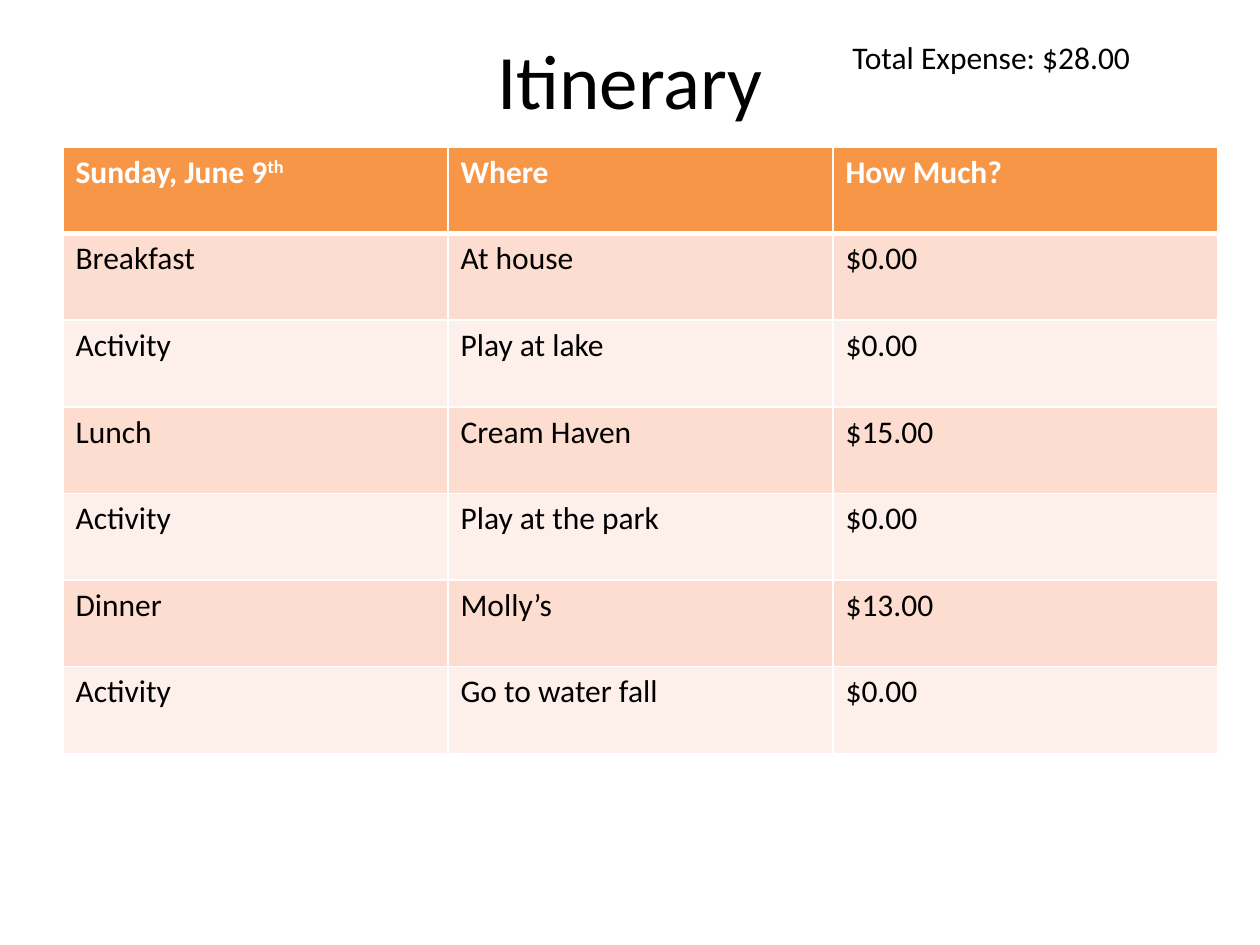
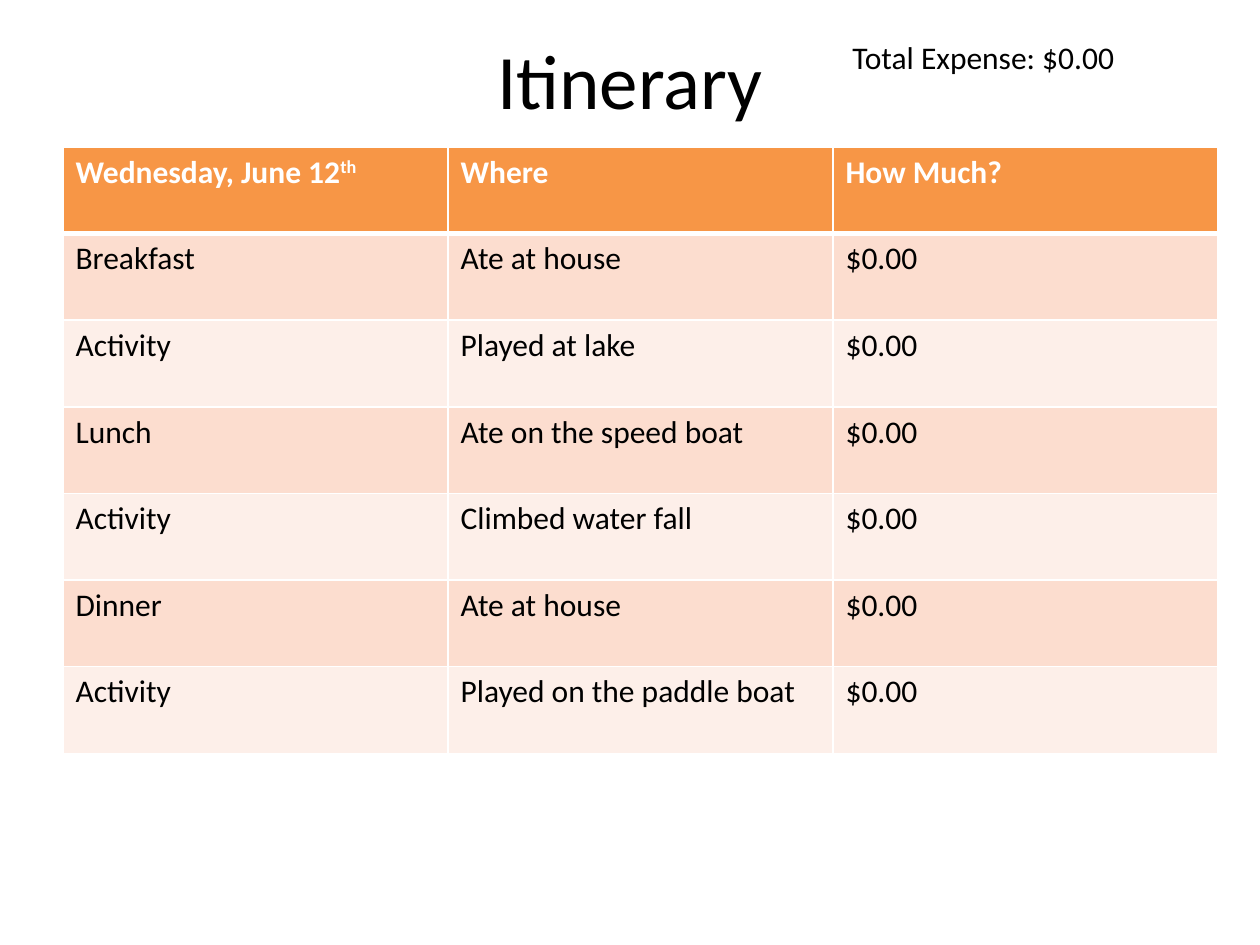
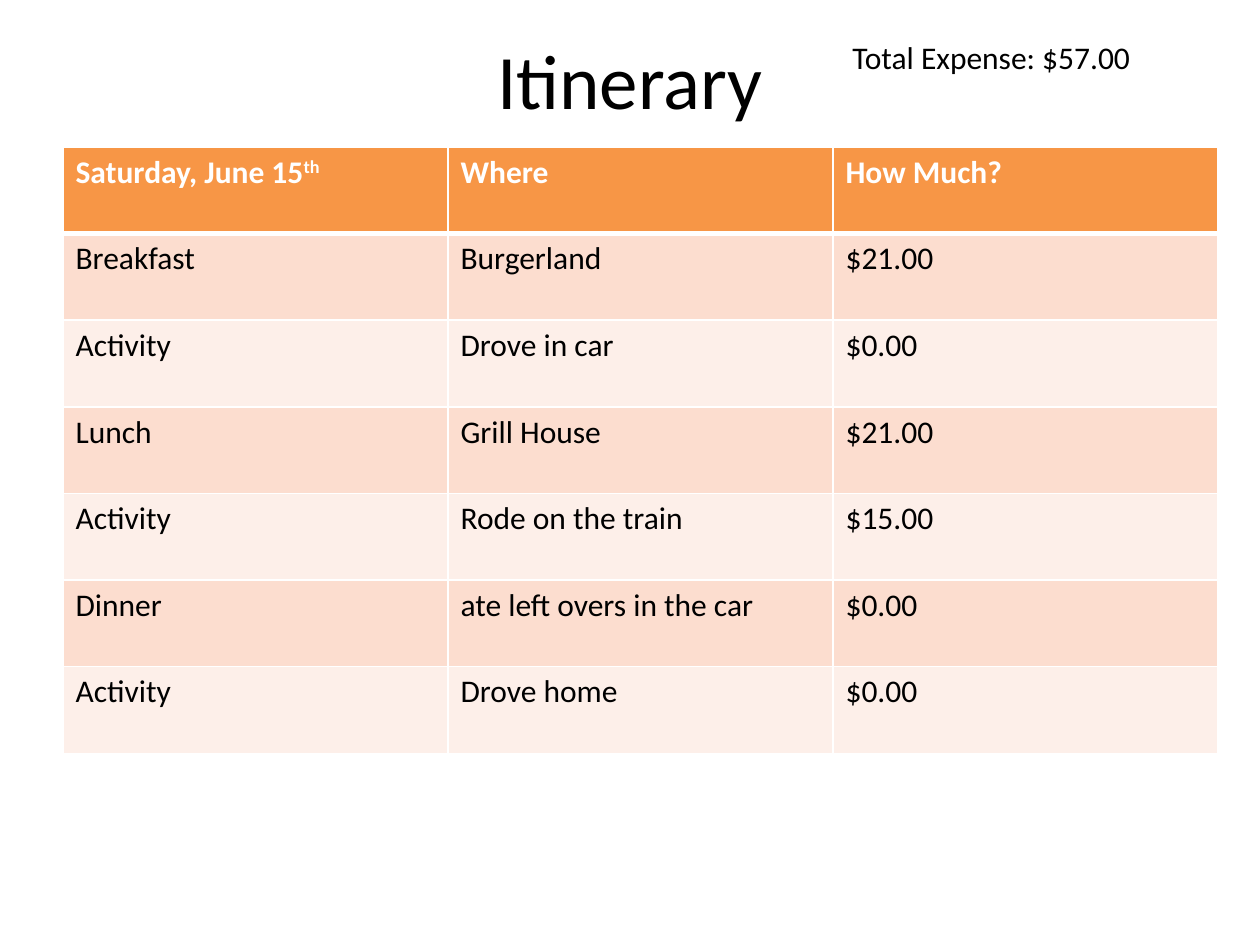
"""Build three itinerary slides, each with a day's plan and its total expense."""
from pptx import Presentation
from pptx import util as u
from pptx.dml import color
from pptx.enum import text
from pptx.oxml import ns, parse_xml

COLORS = {
    "ink": "000000",
    "paper": "FFFFFF",
    "header": "F79646",
    "odd": "FCDDCF",
    "even": "FDEFE9",
}
OCCASIONS = ["Breakfast", "Activity", "Lunch", "Activity", "Dinner", "Activity"]
DAYS = [
    ("Sunday, June 9", [
        ("At house", 0), ("Play at lake", 0), ("Cream Haven", 15),
        ("Play at the park", 0), ("Molly’s", 13), ("Go to water fall", 0),
    ]),
    ("Wednesday, June 12", [
        ("Ate at house", 0), ("Played at lake", 0), ("Ate on the speed boat", 0),
        ("Climbed water fall", 0), ("Ate at house", 0), ("Played on the paddle boat", 0),
    ]),
    ("Saturday, June 15", [
        ("Burgerland", 21), ("Drove in car", 0), ("Grill House", 21),
        ("Rode on the train", 15), ("ate left overs in the car", 0), ("Drove home", 0),
    ]),
]


def dollars(amount):
    return f"${amount:.2f}"


class Deck:
    font = "Calibri"
    body_size = 18
    title_size = 44
    column_width = 220
    row_height = 49.5

    def __init__(self):
        self.prs = Presentation()
        self.prs.slide_width, self.prs.slide_height = u.Pt(720), u.Pt(540)
        self.slide = None

    def new_slide(self):
        self.slide = self.prs.slides.add_slide(self.prs.slide_layouts[6])
        background = self.slide.background.fill
        background.solid()
        background.fore_color.rgb = color.RGBColor.from_string(COLORS["paper"])

    def format_runs(self, paragraph, size, ink="ink", bold=False):
        for run in paragraph.runs:
            run.font.name = self.font
            run.font.size = u.Pt(size)
            run.font.bold = bold
            run.font.color.rgb = color.RGBColor.from_string(COLORS[ink])

    def label(self, wording, left, top, width, height, size):
        box = self.slide.shapes.add_textbox(*map(u.Pt, (left, top, width, height)))
        frame = box.text_frame
        frame.word_wrap = True
        frame.text = wording
        self.format_runs(frame.paragraphs[0], size)
        return frame

    def title(self, wording):
        frame = self.label(wording, 36, 0, 648, 90, self.title_size)
        frame.vertical_anchor = text.MSO_ANCHOR.MIDDLE
        frame.paragraphs[0].alignment = text.PP_ALIGN.CENTER

    def total(self, amount):
        frame = self.label(f"Total Expense: {dollars(amount)}", 480, 18, 222, 29, self.body_size)
        frame.auto_size = text.MSO_AUTO_SIZE.SHAPE_TO_FIT_TEXT

    def borders(self, cell, top, bottom):
        properties = cell._tc.get_or_add_tcPr()
        for side, weight in (("L", 1), ("R", 1), ("T", top), ("B", bottom)):
            properties.append(parse_xml(
                f'<a:ln{side} {ns.nsdecls("a")} w="{u.Pt(weight)}"><a:solidFill>'
                f'<a:srgbClr val="{COLORS["paper"]}"/></a:solidFill></a:ln{side}>'))

    def cell(self, cell, wording, row, suffix=""):
        is_header = row == 0
        self.borders(cell, 3 if row == 1 else 1, 3 if is_header else 1)
        cell.fill.solid()
        band = "header" if is_header else "odd" if row % 2 else "even"
        cell.fill.fore_color.rgb = color.RGBColor.from_string(COLORS[band])
        cell.text_frame.text = wording
        paragraph = cell.text_frame.paragraphs[0]
        if suffix:
            raised = paragraph.add_run()
            raised.text = suffix
            raised._r.get_or_add_rPr().set("baseline", "30000")
        self.format_runs(paragraph, self.body_size, "paper" if is_header else "ink", is_header)

    def plan(self, date, stops):
        rows = [(date, "Where", "How Much?")]
        rows += [(occasion, place, dollars(cost))
                 for occasion, (place, cost) in zip(OCCASIONS, stops)]
        width, height = self.column_width * 3, self.row_height * len(rows)
        grid = self.slide.shapes.add_table(
            len(rows), 3, *map(u.Pt, (36, 84, width, height))).table
        for r, row in enumerate(rows):
            for c, wording in enumerate(row):
                self.cell(grid.cell(r, c), wording, r, "th" if r == c == 0 else "")


def main():
    deck = Deck()
    for date, stops in DAYS:
        deck.new_slide()
        deck.title("Itinerary")
        deck.total(sum(cost for _, cost in stops))
        deck.plan(date, stops)
    deck.prs.save("out.pptx")


if __name__ == "__main__":
    main()
